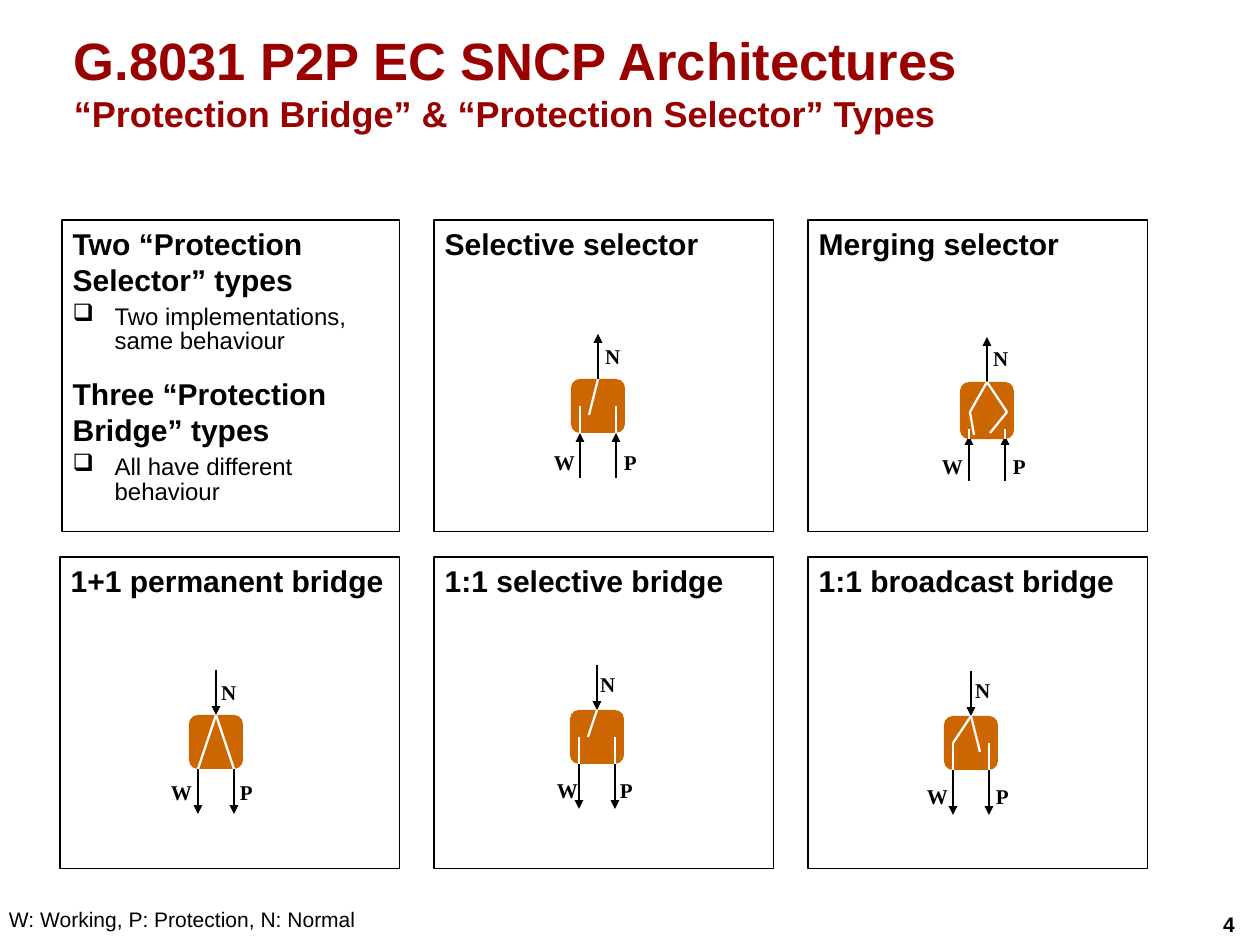
import pptx
import pptx.dml.color
import pptx.enum.shapes
import pptx.enum.text
import pptx.oxml
import pptx.oxml.ns
import pptx.util
from dataclasses import dataclass

EMU_PER_PX = 914400 / 108


def px(length):
    return pptx.util.Emu(round(length * EMU_PER_PX))


@dataclass(frozen=True)
class Theme:
    title: str = "990000"
    ink: str = "000000"
    node: str = "CC6600"
    switch: str = "FFFFFF"
    sans: str = "Arial"
    serif: str = "Times New Roman"
    title_size: int = 35
    subtitle_size: int = 24
    heading_size: int = 20
    body_size: int = 16
    label_size: int = 14
    frame_width: float = 0.75
    stroke_width: float = 1.5


def rgb(code):
    return pptx.dml.color.RGBColor.from_string(code)


class Sheet:
    """Holds the theme and the slide being drawn."""

    def __init__(self, slide, theme):
        self.slide = slide
        self.theme = theme

    def style(self, font, size, color, bold=True, name=None):
        font.name = name or self.theme.sans
        font.size = pptx.util.Pt(size)
        font.bold = bold
        font.color.rgb = rgb(color)

    def title(self, heading, subtitle, left, top, width, height):
        theme = self.theme
        title = self.slide.shapes.title
        title.left, title.top, title.width, title.height = map(px, (left, top, width, height))
        frame = title.text_frame
        frame.auto_size = pptx.enum.text.MSO_AUTO_SIZE.NONE
        frame.vertical_anchor = pptx.enum.text.MSO_ANCHOR.MIDDLE
        paragraph = frame.paragraphs[0]
        paragraph.alignment = pptx.enum.text.PP_ALIGN.LEFT
        for text, size in ((heading, theme.title_size), (subtitle, theme.subtitle_size)):
            if paragraph.runs:
                paragraph.add_line_break()
            run = paragraph.add_run()
            run.text = text
            self.style(run.font, size, theme.title)

    def box(self, kind, left, top, width, height):
        shape = self.slide.shapes.add_shape(kind, *map(px, (left, top, width, height)))
        shape.shadow.inherit = False
        return shape

    def panel(self, left, top, width, height, sections):
        """Outlined box with (heading, bullet) sections; a bullet may be None."""
        theme = self.theme
        panel = self.box(pptx.enum.shapes.MSO_SHAPE.RECTANGLE, left, top, width, height)
        panel.fill.background()
        panel.line.color.rgb = rgb(theme.ink)
        panel.line.width = pptx.util.Pt(theme.frame_width)
        frame = panel.text_frame
        frame.vertical_anchor = pptx.enum.text.MSO_ANCHOR.TOP
        for index, (heading, bullet) in enumerate(sections):
            paragraph = frame.add_paragraph() if index else frame.paragraphs[0]
            paragraph.text = heading
            paragraph.alignment = pptx.enum.text.PP_ALIGN.LEFT
            paragraph.space_before = pptx.util.Pt(14 if index else 0)
            self.style(paragraph.font, theme.heading_size, theme.ink)
            if bullet:
                self.bullet(frame.add_paragraph(), bullet)

    def bullet(self, paragraph, text):
        paragraph.text = text
        paragraph.alignment = pptx.enum.text.PP_ALIGN.LEFT
        paragraph.line_spacing = 0.85
        paragraph.space_before = pptx.util.Pt(5.6)
        self.style(paragraph.font, self.theme.body_size, self.theme.ink, bold=False)
        properties = paragraph._p.get_or_add_pPr()
        properties.set("marL", str(px(42)))
        properties.set("indent", str(px(-42)))
        mark = pptx.oxml.parse_xml(f'<a:buChar {pptx.oxml.ns.nsdecls("a")} char="❑"/>')
        properties.insert_element_before(mark, "a:tabLst", "a:defRPr", "a:extLst")

    def line(self, start, end, color, arrow=False):
        connector = self.slide.shapes.add_connector(
            pptx.enum.shapes.MSO_CONNECTOR.STRAIGHT, *map(px, (*start, *end)))
        connector.line.color.rgb = rgb(color)
        connector.line.width = pptx.util.Pt(self.theme.stroke_width)
        properties = connector.element.spPr
        namespace = pptx.oxml.ns.nsdecls("a")
        if arrow:
            properties.find(pptx.oxml.ns.qn("a:ln")).append(
                pptx.oxml.parse_xml(f'<a:tailEnd {namespace} type="triangle"/>'))
        properties.append(pptx.oxml.parse_xml(f"<a:effectLst {namespace}/>"))
        return connector

    def text(self, text, left, top, width, height, bold=True, name=None, inset=0):
        box = self.slide.shapes.add_textbox(*map(px, (left, top, width, height)))
        frame = box.text_frame
        frame.word_wrap = False
        frame.margin_left = frame.margin_right = px(inset)
        frame.margin_top = frame.margin_bottom = px(inset / 2)
        paragraph = frame.paragraphs[0]
        paragraph.text = text
        self.style(paragraph.font, self.theme.label_size, self.theme.ink, bold, name)

    def diagram(self, left, top, height, upward, strokes, labels):
        """Node with W, P and N arrows; strokes and labels are offsets from its corner."""
        theme = self.theme
        node = self.box(pptx.enum.shapes.MSO_SHAPE.ROUNDED_RECTANGLE, left, top, NODE, height)
        node.fill.solid()
        node.fill.fore_color.rgb = rgb(theme.node)
        node.line.fill.background()

        def at(point):
            return left + point[0], top + point[1]

        for x, inner, outer in ((W_PORT, NODE, NODE + ARROW), (P_PORT, NODE, NODE + ARROW),
                                (APEX[0], 0, -ARROW)):
            tail, tip = (x, inner), (x, outer)
            if (x == APEX[0]) != upward:
                tail, tip = tip, tail
            arrow = self.line(at(tail), at(tip), theme.ink, arrow=True)
            if tail == APEX:
                arrow.begin_connect(node, 0)
            elif tip == APEX:
                arrow.end_connect(node, 0)
        for start, end in strokes:
            stroke = self.line(at(start), at(end), theme.switch)
            if start == APEX:
                stroke.begin_connect(node, 0)
        for letter, width, offset in zip("WPN", (21, 12, 15), labels):
            self.text(letter, *at(offset), width, 23, name=theme.serif)


NODE, ARROW = 54, 45
W_PORT, P_PORT, APEX = 9, 45, (27, 0)
STUBS = [((x, 27), (x, NODE)) for x in (W_PORT, P_PORT)]
COLUMNS = [60 + 374 * column for column in range(3)]
ROWS = (220, 557)
PANEL_WIDTH, PANEL_HEIGHT = 340, 312

TYPES = [("Two “Protection Selector” types", "Two implementations, same behaviour"),
         ("Three “Protection Bridge” types", "All have different behaviour")]
PANELS = [
    [TYPES, [("Selective selector", None)], [("Merging selector", None)]],
    [[("1+1 permanent bridge", None)], [("1:1 selective bridge", None)],
     [("1:1 broadcast bridge", None)]],
]

# left, top, height, upward, strokes, W/P/N label offsets
DIAGRAMS = [
    (571, 379, 54, True, STUBS + [(APEX, (18, 36))], [(-17, 70), (53, 70), (34, -36)]),
    (960, 382, 57, True,
     [((9, 57), (9, 47)), ((45, 57), (45, 47)), (APEX, (10, 30)), ((10, 30), (14, 53)),
      (APEX, (47, 30)), ((47, 30), (30, 51))], [(-18, 71), (53, 71), (33, -36)]),
    (189, 715, 54, False, [(APEX, (W_PORT, NODE)), (APEX, (P_PORT, NODE))],
     [(-18, 64), (51, 64), (32, -36)]),
    (570, 710, 54, False, STUBS + [(APEX, (18, 27))], [(-13, 68), (50, 68), (30, -39)]),
    (944, 716, 54, False, STUBS + [(APEX, (W_PORT, 27)), (APEX, (36, 36))],
     [(-17, 67), (52, 67), (31, -39)]),
]


def main():
    deck = pptx.Presentation()
    deck.slide_width, deck.slide_height = px(1260), px(945)
    sheet = Sheet(deck.slides.add_slide(deck.slide_layouts[5]), Theme())
    sheet.title("G.8031 P2P EC SNCP Architectures",
                "“Protection Bridge” & “Protection Selector” Types", 63, 22, 1134, 119)
    for top, row in zip(ROWS, PANELS):
        for left, sections in zip(COLUMNS, row):
            inset = 2 if sections is TYPES else 0
            sheet.panel(left + inset, top, PANEL_WIDTH - inset, PANEL_HEIGHT, sections)
    for diagram in DIAGRAMS:
        sheet.diagram(*diagram)
    sheet.text("W: Working, P: Protection, N: Normal", 9, 906, 349, 26, bold=False)
    sheet.text("4", 1212, 906, 47, 37, inset=11)
    deck.save("out.pptx")


if __name__ == "__main__":
    main()
